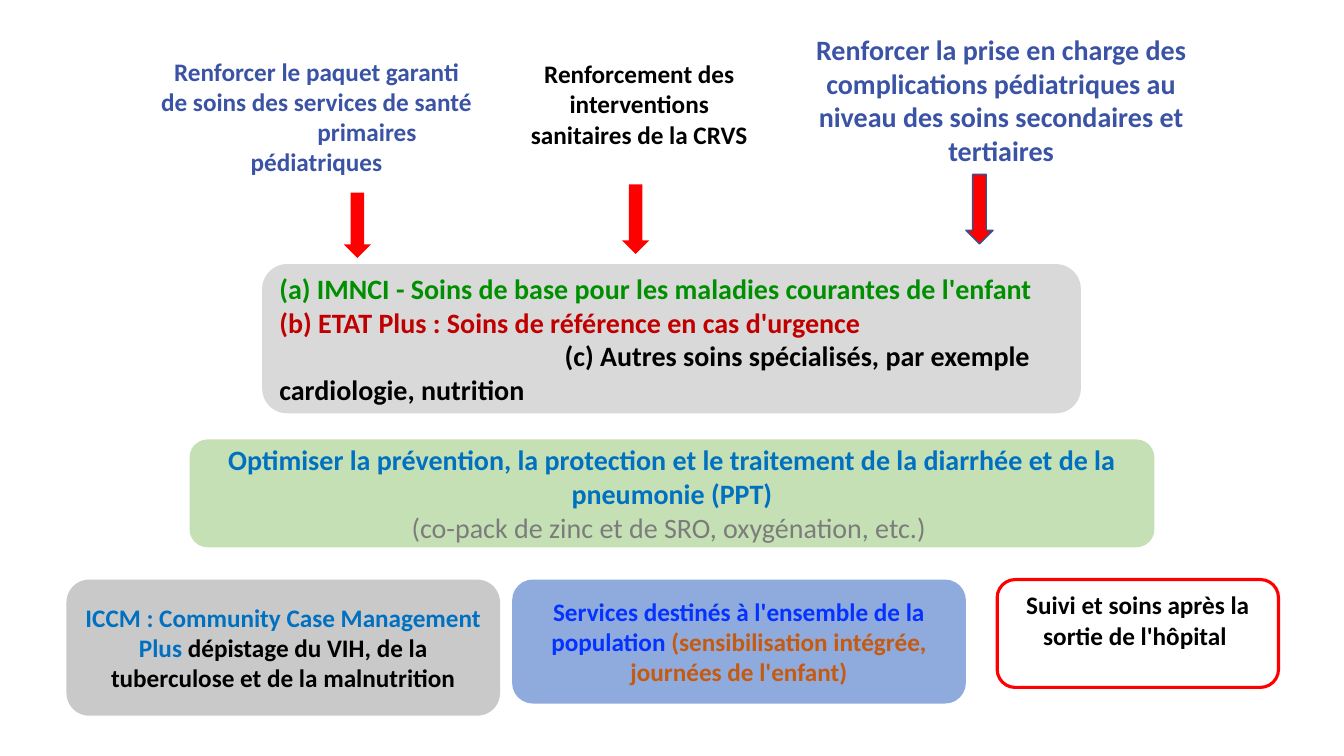
from pptx import Presentation
from pptx.dml.color import RGBColor
from pptx.enum.shapes import MSO_SHAPE
from pptx.enum.text import MSO_ANCHOR, PP_ALIGN
from pptx.util import Inches, Pt

ROUNDED, DOWN_ARROW = MSO_SHAPE.ROUNDED_RECTANGLE, MSO_SHAPE.DOWN_ARROW
TOP, MIDDLE = MSO_ANCHOR.TOP, MSO_ANCHOR.MIDDLE
LEFT, CENTER = PP_ALIGN.LEFT, PP_ALIGN.CENTER
FONT = "Calibri"
BLACK, WHITE, RED = "000000", "FFFFFF", "FF0000"
INDIGO, BLUE, GREY = "3A53A4", "0070C0", "7C7C7C"
ARROW_W = 0.27


def rgb(color):
    return RGBColor.from_string(color)


def add_paragraph(tf, runs, size=18, align=CENTER, margin=0, indent=0):
    """Add one paragraph; runs is a list of (text, color, bold)."""
    p = tf.paragraphs[0]
    if p.runs:
        p = tf.add_paragraph()
    p.alignment = align
    pPr = p._p.get_or_add_pPr()
    pPr.set("marL", str(Inches(margin)))
    pPr.set("indent", str(Inches(indent)))
    for text, color, bold in runs:
        r = p.add_run()
        r.text = text
        r.font.name, r.font.size, r.font.bold = FONT, Pt(size), bold
        r.font.color.rgb = rgb(color)


def add_box(s, box, fill=None, line=None, width=1, kind=ROUNDED, anchor=MIDDLE):
    """Add a shape and return its text frame."""
    sp = s.shapes.add_shape(kind, *map(Inches, box))
    sp.shadow.inherit = False
    if fill:
        sp.fill.solid()
        sp.fill.fore_color.rgb = rgb(fill)
    else:
        sp.fill.background()
    if line:
        sp.line.color.rgb = rgb(line)
        sp.line.width = Pt(width)
    else:
        sp.line.fill.background()
    tf = sp.text_frame
    tf.word_wrap = True
    tf.vertical_anchor = anchor
    return tf


def add_arrow(s, left, top, height, line=None):
    add_box(s, (left, top, ARROW_W, height), RED, line, kind=DOWN_ARROW)


def add_goals(s):
    """Three goals along the top, each with an arrow down to the care levels."""
    tf = add_box(s, (1.41, 0.4, 3.46, 1.51))
    add_paragraph(tf, [("Renforcer le paquet garanti de soins des services de santé",
                        INDIGO, True)])
    add_paragraph(tf, [("primaires", INDIGO, True)], margin=1)
    add_paragraph(tf, [("pédiatriques", INDIGO, True)])
    add_arrow(s, 3.41, 1.91, 0.65)

    sp = s.shapes.add_textbox(*map(Inches, (5.08, 0.53, 2.52, 1.01)))
    sp.text_frame.word_wrap = True
    add_paragraph(sp.text_frame, [("Renforcement des interventions sanitaires de la CRVS",
                                   BLACK, True)])
    add_arrow(s, 6.17, 1.83, 0.69)

    tf = add_box(s, (7.73, 0.25, 4.4, 1.48))
    add_paragraph(tf, [("Renforcer la prise en charge des complications pédiatriques "
                        "au niveau des soins secondaires et tertiaires",
                        INDIGO, True)], size=20)
    add_arrow(s, 9.58, 1.73, 0.69, line="325491")


def add_care_levels(s, box):
    tf = add_box(s, box, "D9D9D9")
    levels = [
        ("(a) IMNCI - Soins de base pour les maladies courantes de l'enfant", "008F00", 0),
        ("(b) ETAT Plus : Soins de référence en cas d'urgence", "C00000", 0),
        ("(c) Autres soins spécialisés, par exemple cardiologie, nutrition", BLACK, 2.83),
    ]
    for text, color, indent in levels:
        add_paragraph(tf, [(text, color, True)], size=20, align=LEFT, indent=indent)


def add_prevention(s, box):
    tf = add_box(s, box, "C5E0B4")
    add_paragraph(tf, [("Optimiser la prévention, la protection et le traitement de la "
                        "diarrhée et de la pneumonie (PPT)", BLUE, True)], size=20)
    add_paragraph(tf, [("(co-pack de zinc et de SRO, oxygénation, etc.) ", GREY, False)],
                  size=20)


def add_services(s, top):
    """Row of community, population and follow-up services."""
    tf = add_box(s, (0.66, top, 4.3, 1.35), "C9C9C9")
    add_paragraph(tf, [("ICCM : Community Case Management Plus ", BLUE, True),
                       ("dépistage du VIH, de la tuberculose et de la malnutrition",
                        BLACK, True)])
    tf = add_box(s, (5.08, top, 4.5, 1.23), "8FAADC")
    add_paragraph(tf, [("Services destinés à l'ensemble de la population ", "0432FF", True),
                       ("(sensibilisation intégrée, journées de l'enfant)",
                        "C55A11", True)])
    tf = add_box(s, (9.89, top, 2.79, 1.07), WHITE, RED, 2.25, anchor=TOP)
    add_paragraph(tf, [("Suivi et soins après la sortie de l'hôpital ", BLACK, True)])


def main():
    prs = Presentation()
    prs.slide_width, prs.slide_height = Inches(13.33), Inches(7.5)
    s = prs.slides.add_slide(prs.slide_layouts[6])
    add_goals(s)
    add_care_levels(s, (2.6, 2.62, 8.12, 1.48))
    add_prevention(s, (1.88, 4.36, 9.57, 1.07))
    add_services(s, 5.75)
    prs.save("out.pptx")


if __name__ == "__main__":
    main()
